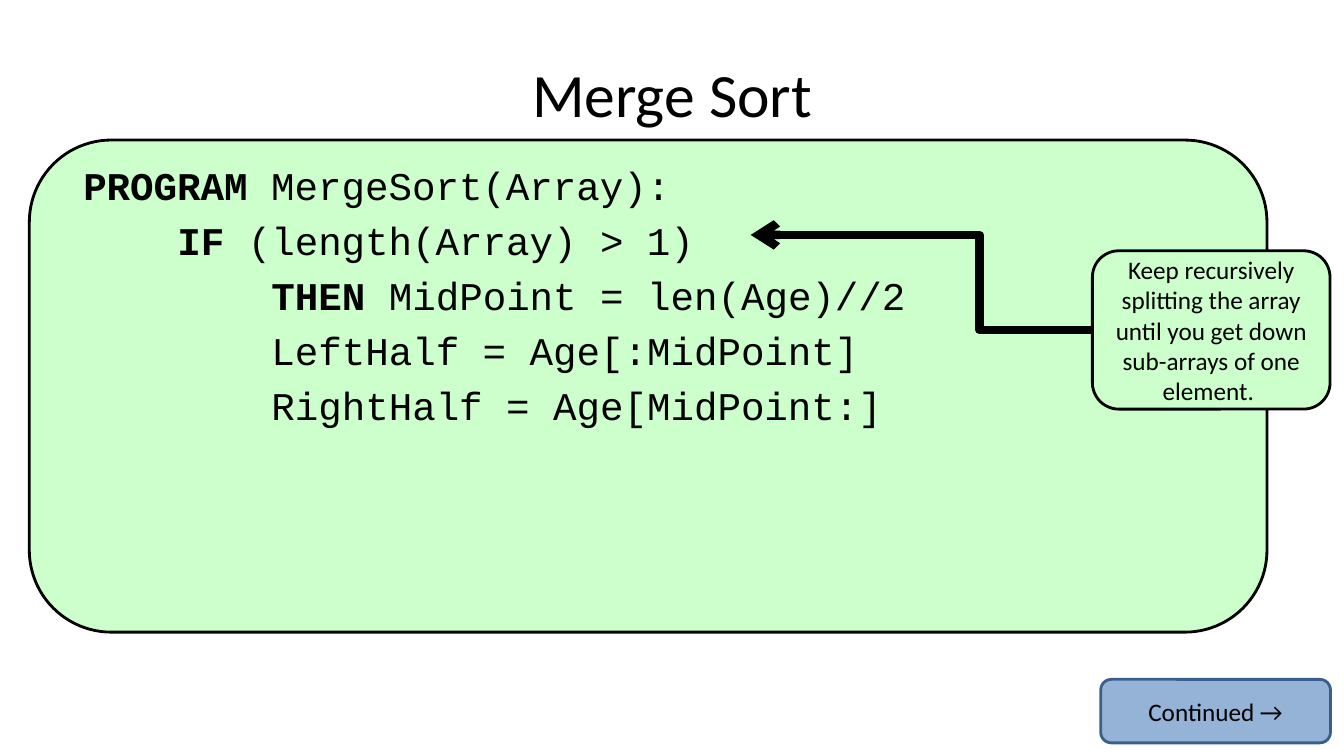
from dataclasses import dataclass

from lxml import etree
from pptx import Presentation
from pptx import util as u
from pptx.dml.color import RGBColor
from pptx.enum import shapes, text
from pptx.oxml import ns

COLOURS = {"ink": "000000", "mint": "CCFFCC", "blue": "95B3D7", "navy": "3A5F8C"}
CODE_SIZE = 28
INDENT_STEP = u.Pt(CODE_SIZE * 0.6 * 4)


@dataclass
class Box:
    left: float
    top: float
    width: float
    height: float
    fill: str
    line: str
    label: str = ""


@dataclass
class CodeLine:
    level: int
    keyword: str
    rest: str


PANEL = Box(0.74, 3.53, 31.19, 12.4, "mint", "ink")
CALLOUT = Box(27.53, 6.32, 5.99, 3.99, "mint", "ink",
              "Keep recursively splitting the array until you get down "
              "sub-arrays of one element. ")
BUTTON = Box(27.74, 17.12, 5.79, 1.6, "blue", "navy", "Continued →")

CODE = [
    CodeLine(0, "PROGRAM ", "MergeSort(Array):"),
    CodeLine(1, "IF", " (length(Array) > 1)"),
    CodeLine(2, "THEN ", "MidPoint = len(Age)//2"),
    CodeLine(2, "", "LeftHalf = Age[:MidPoint]"),
    CodeLine(2, "", "RightHalf = Age[MidPoint:]"),
]


def colour(name: str) -> RGBColor:
    return RGBColor.from_string(COLOURS[name])


def add_run(p, content: str, size: int, font: str = "Calibri", bold: bool = False) -> None:
    r = p.add_run()
    r.text = content
    r.font.size = u.Pt(size)
    r.font.name = font
    r.font.bold = bold
    r.font.color.rgb = colour("ink")


def add_centred(tf, content: str, size: int) -> None:
    tf.word_wrap = True
    tf.vertical_anchor = text.MSO_ANCHOR.MIDDLE
    p = tf.paragraphs[0]
    p.alignment = text.PP_ALIGN.CENTER
    add_run(p, content, size)


def add_box(s, box: Box):
    sp = s.shapes.add_shape(shapes.MSO_SHAPE.ROUNDED_RECTANGLE, u.Cm(box.left),
                            u.Cm(box.top), u.Cm(box.width), u.Cm(box.height))
    sp.shadow.inherit = False
    sp.fill.solid()
    sp.fill.fore_color.rgb = colour(box.fill)
    sp.line.color.rgb = colour(box.line)
    sp.line.width = u.Pt(2)
    if box.label:
        add_centred(sp.text_frame, box.label, 18)
    return sp


def add_code(s, lines: list[CodeLine]) -> None:
    tf = s.shapes.add_textbox(u.Cm(1.7), u.Cm(3.94), u.Cm(30.48), u.Cm(12.57)).text_frame
    tf.word_wrap = True
    for i, line in enumerate(lines):
        p = tf.add_paragraph() if i else tf.paragraphs[0]
        p.space_before = u.Pt(CODE_SIZE * 0.2)
        pPr = p._p.get_or_add_pPr()
        pPr.set("marL", str(u.Cm(0.15) + line.level * INDENT_STEP))
        pPr.set("indent", "0")
        if line.keyword:
            add_run(p, line.keyword, CODE_SIZE, "Courier New", True)
        add_run(p, line.rest, CODE_SIZE, "Courier New")


def add_arrow(s, source, x: float, y: float) -> None:
    cxn = s.shapes.add_connector(shapes.MSO_CONNECTOR.ELBOW, source.left,
                                 source.top + source.height // 2, u.Cm(x), u.Cm(y))
    cxn.begin_connect(source, 1)
    cxn.line.color.rgb = colour("ink")
    cxn.line.width = u.Pt(6)
    spPr = cxn._element.spPr
    bend = etree.SubElement(spPr.find(ns.qn("a:prstGeom")).find(ns.qn("a:avLst")), ns.qn("a:gd"))
    bend.set("name", "adj1")
    bend.set("fmla", "val 33000")
    etree.SubElement(cxn.line._get_or_add_ln(), ns.qn("a:tailEnd")).set("type", "arrow")
    etree.SubElement(spPr, ns.qn("a:effectLst"))


def main() -> None:
    prs = Presentation()
    prs.slide_width, prs.slide_height = u.Cm(33.87), u.Cm(19.05)
    s = prs.slides.add_slide(prs.slide_layouts[6])
    add_box(s, PANEL)
    add_code(s, CODE)
    title = s.shapes.add_textbox(u.Cm(1.7), u.Cm(0.76), u.Cm(30.48), u.Cm(3.18))
    add_centred(title.text_frame, "Merge Sort", 44)
    callout = add_box(s, CALLOUT)
    add_arrow(s, callout, 18.92, 5.92)
    add_box(s, BUTTON)
    prs.save("out.pptx")


if __name__ == "__main__":
    main()
